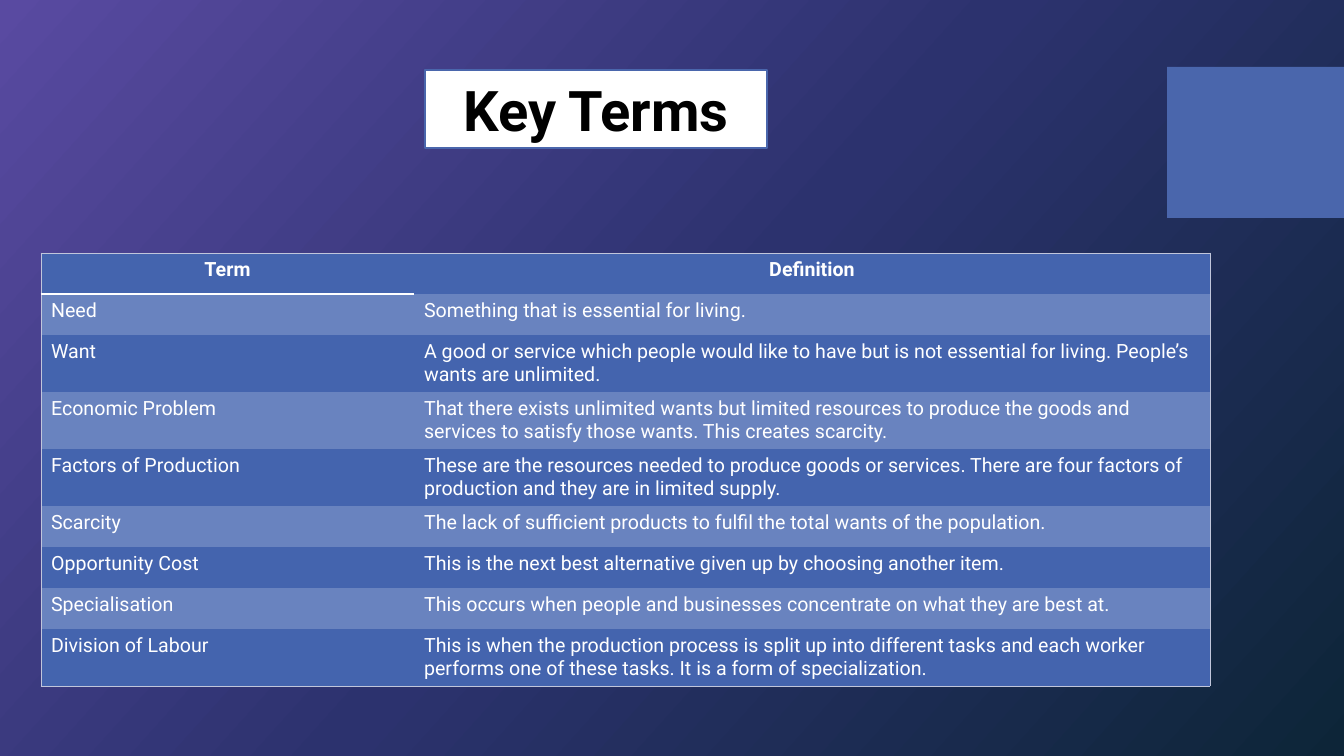
"""Build the Key Terms slide: a title box above a table of economics definitions."""
from copy import deepcopy

from lxml.etree import SubElement
from pptx import Presentation
from pptx.dml.color import RGBColor
from pptx.enum.shapes import MSO_SHAPE as SHAPE
from pptx.enum.text import MSO_ANCHOR as ANCHOR, PP_ALIGN as ALIGN
from pptx.oxml.ns import qn
from pptx.util import Pt

PX = 914400 * 10 // 1008 + 1
SLIDE_W, SLIDE_H = 12192000, 6858000
PURPLE = RGBColor(0x59, 0x4A, 0xA1)
INDIGO = RGBColor(0x2C, 0x32, 0x6E)
NAVY = RGBColor(0x0D, 0x25, 0x38)
ACCENT = RGBColor(0x4A, 0x66, 0xAC)
ROW_BLUE = RGBColor(0x44, 0x64, 0xAE)
BAND_BLUE = RGBColor(0x69, 0x83, 0xBF)
FRAME = RGBColor(0xC1, 0xC6, 0xDB)
WHITE = RGBColor(0xFF, 0xFF, 0xFF)
BLACK = RGBColor(0, 0, 0)
PLAIN_STYLE = "{2D5ABB26-0587-4C30-8999-92F81FD0307C}"
SINGLE_LINE, DOUBLE_LINE = 41, 57

TERMS = [
    ("Term", "Definition", SINGLE_LINE),
    ("Need", "Something that is essential for living.", SINGLE_LINE),
    ("Want", "A good or service which people would like to have but is not essential "
     "for living. People’s wants are unlimited.", DOUBLE_LINE),
    ("Economic Problem", "That there exists unlimited wants but limited resources to produce "
     "the goods and services to satisfy those wants. This creates scarcity.", DOUBLE_LINE),
    ("Factors of Production", "These are the resources needed to produce goods or services. "
     "There are four factors of production and they are in limited supply.", DOUBLE_LINE),
    ("Scarcity", "The lack of sufficient products to fulfil the total wants of the population.",
     SINGLE_LINE),
    ("Opportunity Cost", "This is the next best alternative given up by choosing another item.",
     SINGLE_LINE),
    ("Specialisation", "This occurs when people and businesses concentrate on what they are "
     "best at.", SINGLE_LINE),
    ("Division of Labour", "This is when the production process is split up into different tasks "
     "and each worker performs one of these tasks. It is a form of specialization.", DOUBLE_LINE),
]


def write(frame, text, size=14, color=WHITE, bold=False, align=ALIGN.LEFT):
    frame.word_wrap = True
    paragraph = frame.paragraphs[0]
    paragraph.alignment = align
    run = paragraph.add_run()
    run.text = text
    run.font.name = "Roboto"
    run.font.size = Pt(size)
    run.font.bold = bold
    run.font.color.rgb = color


def draw_edge(cell, side, color, points):
    edge = SubElement(cell._tc.get_or_add_tcPr(), qn(f"a:ln{side}"), w=str(Pt(points)))
    SubElement(SubElement(edge, qn("a:solidFill")), qn("a:srgbClr"), val=str(color))


deck = Presentation()
deck.slide_width, deck.slide_height = SLIDE_W, SLIDE_H
slide = deck.slides.add_slide(deck.slide_layouts[6])

backdrop = slide.background.fill
backdrop.gradient()
backdrop.gradient_angle = 360 - 42
stop_list = slide._element.find(".//" + qn("a:gsLst"))
stop_list.insert(1, deepcopy(stop_list[0]))
for stop, color, position in zip(backdrop.gradient_stops, (PURPLE, INDIGO, NAVY), (0, 0.5, 1)):
    stop.color.rgb = color
    stop.position = position

corner_block = slide.shapes.add_shape(SHAPE.RECTANGLE, 1167 * PX, 67 * PX, 177 * PX, 151 * PX)
corner_block.shadow.inherit = False
corner_block.fill.solid()
corner_block.fill.fore_color.rgb = ACCENT
corner_block.line.fill.background()

title = slide.shapes.add_shape(SHAPE.RECTANGLE, 425 * PX, 70 * PX, 342 * PX, 78 * PX)
title.shadow.inherit = False
title.fill.solid()
title.fill.fore_color.rgb = WHITE
title.line.color.rgb = ACCENT
title.line.width = Pt(1)
title.text_frame.vertical_anchor = ANCHOR.MIDDLE
write(title.text_frame, "Key Terms", size=40, color=BLACK, bold=True, align=ALIGN.CENTER)

table_height = sum(height for _, _, height in TERMS)
glossary = slide.shapes.add_table(
    len(TERMS), 2, 41 * PX, 253 * PX, 1169 * PX, table_height * PX).table
glossary._tbl.tblPr.find(qn("a:tableStyleId")).text = PLAIN_STYLE
glossary.columns[0].width = 373 * PX
glossary.columns[1].width = 796 * PX

last = len(TERMS) - 1
for row, (term, definition, height) in enumerate(TERMS):
    glossary.rows[row].height = height * PX
    for column, text in enumerate((term, definition)):
        cell = glossary.cell(row, column)
        header = row == 0
        write(cell.text_frame, text, bold=header, align=ALIGN.CENTER if header else ALIGN.LEFT)
        draw_edge(cell, "R" if column else "L", FRAME, 0.75)
        if header:
            draw_edge(cell, "T", FRAME, 0.75)
        if header and column == 0:
            draw_edge(cell, "B", WHITE, 1.5)
        if row == last:
            draw_edge(cell, "B", FRAME, 0.75)
        cell.fill.solid()
        cell.fill.fore_color.rgb = BAND_BLUE if row % 2 else ROW_BLUE

deck.save("out.pptx")
